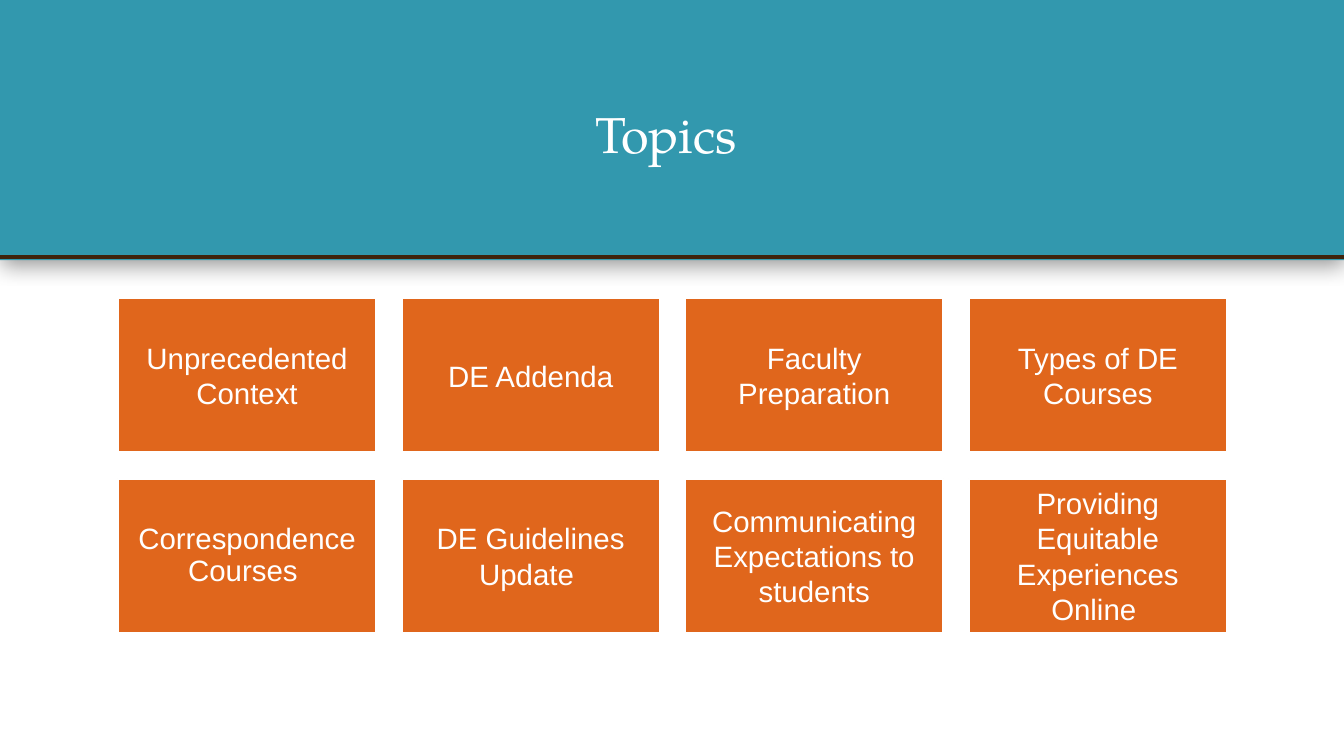
from dataclasses import dataclass

from lxml.etree import SubElement
from pptx import Presentation
from pptx.dml.color import RGBColor
from pptx.enum.shapes import MSO_CONNECTOR, MSO_SHAPE
from pptx.enum.text import MSO_ANCHOR, PP_ALIGN
from pptx.oxml import parse_xml
from pptx.oxml.ns import nsdecls, qn
from pptx.shapes.autoshape import Shape
from pptx.slide import Slide
from pptx.util import Inches, Pt


@dataclass(frozen=True)
class Theme:
    """Colours, fonts and type sizes of the slide."""
    teal: RGBColor = RGBColor(0x32, 0x98, 0xAE)
    brown: RGBColor = RGBColor(0x3F, 0x24, 0x0D)
    orange: RGBColor = RGBColor(0xE0, 0x66, 0x1C)
    white: RGBColor = RGBColor(0xFF, 0xFF, 0xFF)
    serif: str = "TeX Gyre Pagella"
    sans: str = "Arial"
    head: float = 36
    body: float = 21


@dataclass(frozen=True)
class Topic:
    """One topic tile."""
    text: str
    spacing: float = 1.0


THEME = Theme()
WIDTH, HEIGHT = 13.33, 7.5
COLS = 4
LEFT, TOP = 1.17, 2.96
TILE_W, TILE_H = 2.56, 1.53
STEP_X, STEP_Y = 2.813, 1.79
TOPICS = [
    Topic("Unprecedented Context"),
    Topic("DE Addenda"),
    Topic("Faculty Preparation"),
    Topic("Types of DE Courses"),
    Topic("Correspondence Courses ", 0.9),
    Topic("DE Guidelines Update "),
    Topic("Communicating Expectations to students"),
    Topic("Providing Equitable Experiences Online "),
]


def write(shape: Shape, text: str, font: str, size: float, spacing: float) -> None:
    """Fill a shape with one centred white paragraph."""
    frame = shape.text_frame
    frame.word_wrap = True
    frame.vertical_anchor = MSO_ANCHOR.MIDDLE
    para = frame.paragraphs[0]
    para.alignment = PP_ALIGN.CENTER
    para.line_spacing = spacing
    run = para.add_run()
    run.text = text
    run.font.name = font
    run.font.size = Pt(size)
    run.font.color.rgb = THEME.white


def add_rect(slide: Slide, x: float, y: float, w: float, h: float,
             fill: RGBColor) -> Shape:
    """Add a filled rectangle without a shadow."""
    rect = slide.shapes.add_shape(
        MSO_SHAPE.RECTANGLE, Inches(x), Inches(y), Inches(w), Inches(h))
    rect.shadow.inherit = False
    rect.fill.solid()
    rect.fill.fore_color.rgb = fill
    return rect


def add_band(slide: Slide) -> None:
    """Add the header band, its soft shadow and its lower rule."""
    band = add_rect(slide, 0, 0, WIDTH, 2.58, THEME.teal)
    band.line.fill.background()
    band._element.spPr.find(qn("a:effectLst")).append(parse_xml(
        f'<a:outerShdw {nsdecls("a")} blurRad="{Pt(15)}" dist="{Pt(3)}" '
        'dir="5400000" algn="t" rotWithShape="0"><a:srgbClr val="000000">'
        '<a:alpha val="40000"/></a:srgbClr></a:outerShdw>'))
    rule = slide.shapes.add_connector(
        MSO_CONNECTOR.STRAIGHT, Inches(WIDTH), Inches(2.55), 0, Inches(2.55))
    rule.line.color.rgb = THEME.brown
    rule.line.width = Pt(3)
    SubElement(rule._element.spPr, qn("a:effectLst"))


def set_title(slide: Slide) -> None:
    """Place the title in front of the band."""
    title = slide.shapes.title
    title.left, title.top = Inches(1.17), Inches(0.44)
    title.width, title.height = Inches(11), Inches(1.84)
    write(title, "Topics ", THEME.serif, THEME.head, 0.9)
    slide.shapes._spTree.append(title._element)


def add_tile(slide: Slide, index: int, topic: Topic) -> None:
    """Add a topic tile at its place in the grid."""
    row, col = divmod(index, COLS)
    tile = add_rect(slide, LEFT + col * STEP_X, TOP + row * STEP_Y,
                    TILE_W, TILE_H, THEME.orange)
    tile.line.color.rgb = THEME.white
    tile.line.width = Pt(1.5)
    frame = tile.text_frame
    frame.margin_left = frame.margin_right = Inches(0.09)
    frame.margin_top = frame.margin_bottom = Inches(0.09)
    write(tile, topic.text, THEME.sans, THEME.body, topic.spacing)


def main() -> None:
    """Build and save the slide."""
    deck = Presentation()
    deck.slide_width, deck.slide_height = Inches(WIDTH), Inches(HEIGHT)
    slide = deck.slides.add_slide(deck.slide_layouts[5])
    add_band(slide)
    set_title(slide)
    for index, topic in enumerate(TOPICS):
        add_tile(slide, index, topic)
    deck.save("out.pptx")


if __name__ == "__main__":
    main()
